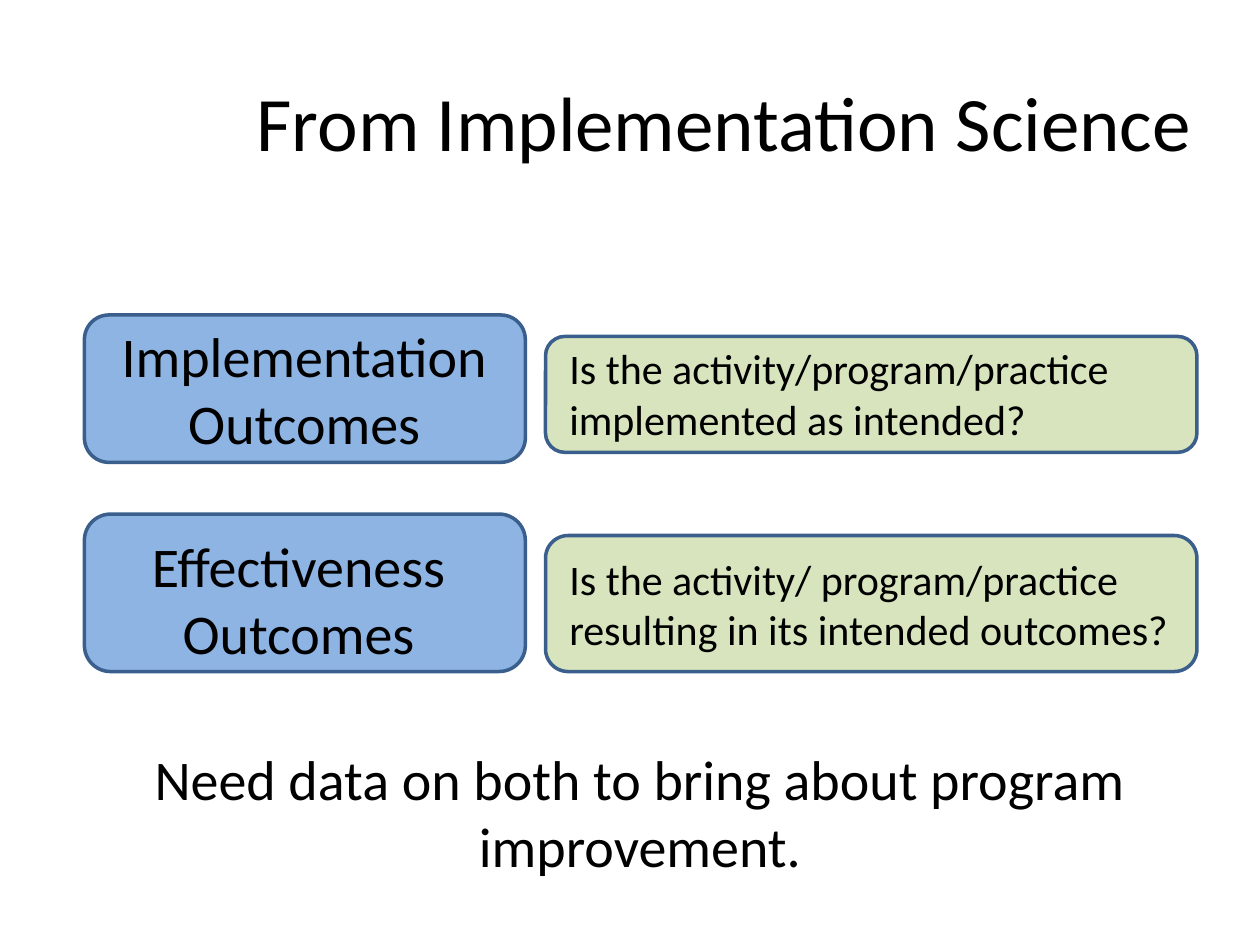
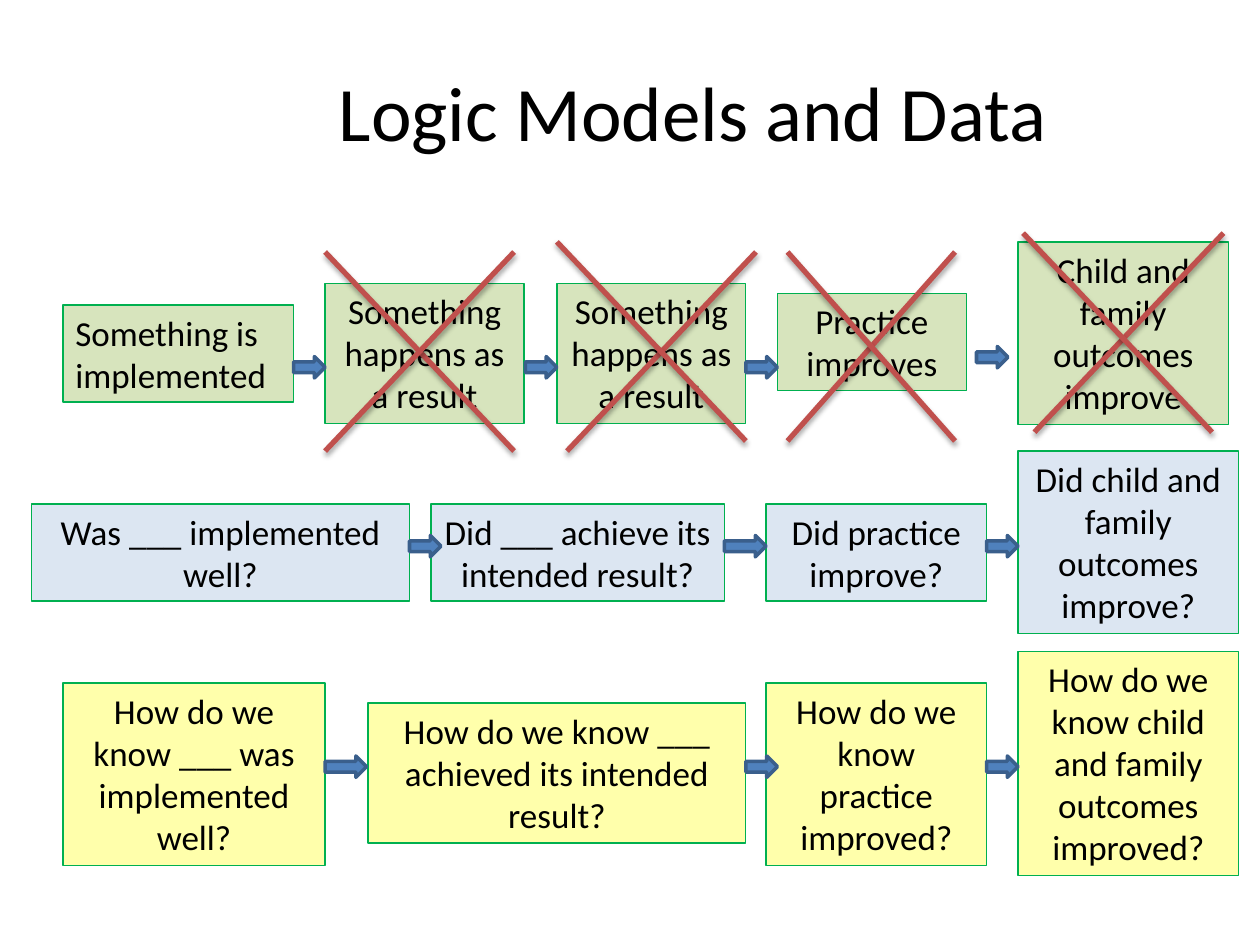
from dataclasses import dataclass
from typing import NamedTuple

from lxml import etree
from pptx import Presentation
from pptx.dml.color import RGBColor
from pptx.enum.shapes import MSO_CONNECTOR, MSO_SHAPE
from pptx.enum.text import MSO_ANCHOR, MSO_AUTO_SIZE, PP_ALIGN
from pptx.oxml.ns import qn
from pptx.util import Inches, Pt

LEFT, CENTER = PP_ALIGN.LEFT, PP_ALIGN.CENTER
TOP, MIDDLE = MSO_ANCHOR.TOP, MSO_ANCHOR.MIDDLE
GROW = MSO_AUTO_SIZE.SHAPE_TO_FIT_TEXT
RECTANGLE = MSO_SHAPE.RECTANGLE
ROUNDED = MSO_SHAPE.ROUNDED_RECTANGLE
ARROW = MSO_SHAPE.RIGHT_ARROW
STRAIGHT = MSO_CONNECTOR.STRAIGHT
TITLE_ONLY = 5


@dataclass(frozen=True)
class Theme:
    font: str = "Calibri"
    ink: str = "000000"
    blue: str = "8EB4E3"
    green: str = "D7E4BD"
    pale_blue: str = "DCE6F2"
    yellow: str = "FFFFAB"
    arrow: str = "4F81BD"
    outline: str = "3A5F8C"
    step_border: str = "00B050"
    cross: str = "C0504D"
    title_size: int = 44
    statement_size: int = 32
    question_size: int = 24
    step_size: int = 20
    border_width: float = 0.75
    outline_width: float = 2
    cross_width: float = 3


THEME = Theme()


class Frame(NamedTuple):
    left: float
    top: float
    width: float
    height: float

    def lengths(self) -> list:
        return [Inches(value) for value in self]


class Stroke(NamedTuple):
    start_x: float
    start_y: float
    end_x: float
    end_y: float


@dataclass(frozen=True)
class Card:
    panel: Frame
    caption: Frame
    text: str
    fill: str
    size: int
    align: PP_ALIGN


@dataclass(frozen=True)
class Step:
    frame: Frame
    text: str
    align: PP_ALIGN = CENTER


@dataclass(frozen=True)
class Chain:
    fill: str
    steps: list[Step]
    arrows: list[Frame]


OUTCOME_CARDS = [
    Card(Frame(0.67, 2.5, 3.5, 1.17), Frame(0.75, 2.5, 3.33, 1.18),
         "Implementation Outcomes", THEME.blue, THEME.statement_size, CENTER),
    Card(Frame(0.67, 4.08, 3.5, 1.25), Frame(0.83, 4.17, 3.08, 1.18),
         "Effectiveness Outcomes", THEME.blue, THEME.statement_size, CENTER),
    Card(Frame(4.33, 2.67, 5.17, 0.92), Frame(4.42, 2.67, 4.5, 0.91),
         "Is the activity/program/practice implemented as intended?",
         THEME.green, THEME.question_size, LEFT),
    Card(Frame(4.33, 4.25, 5.17, 1.08), Frame(4.42, 4.34, 5, 0.91),
         "Is the activity/ program/practice resulting in its intended outcomes?",
         THEME.green, THEME.question_size, LEFT),
]


def arrow_row(top: float, *spans: tuple[float, float]) -> list[Frame]:
    return [Frame(left, top, width, 0.17) for left, width in spans]


CHAINS = [
    Chain(THEME.green, [
        Step(Frame(0.5, 2.42, 1.83, 0.77), "Something is implemented", LEFT),
        Step(Frame(2.58, 2.25, 1.58, 1.11), "Something happens as a result"),
        Step(Frame(4.42, 2.25, 1.5, 1.11), "Something happens as a result"),
        Step(Frame(6.17, 2.33, 1.5, 0.77), "Practice improves"),
        Step(Frame(8.08, 1.92, 1.67, 1.45), "Child and family outcomes improve"),
    ], arrow_row(2.83, (2.33, 0.25), (4.17, 0.25), (5.92, 0.25))
        + arrow_row(2.75, (7.75, 0.25))),
    Chain(THEME.pale_blue, [
        Step(Frame(0.25, 4, 3, 0.77), "Was ___ implemented well?"),
        Step(Frame(3.42, 4, 2.33, 0.77), "Did ___ achieve its intended result?"),
        Step(Frame(6.08, 4, 1.75, 0.77), "Did practice improve?"),
        Step(Frame(8.08, 3.58, 1.75, 1.45), "Did child and family outcomes improve?"),
    ], arrow_row(4.25, (3.25, 0.25), (5.75, 0.33), (7.83, 0.25))),
    Chain(THEME.yellow, [
        Step(Frame(0.5, 5.42, 2.08, 1.45), "How do we know ___ was implemented well?"),
        Step(Frame(2.92, 5.58, 3, 1.11),
             "How do we know ___ achieved its intended result?"),
        Step(Frame(6.08, 5.42, 1.75, 1.45), "How do we know practice improved?"),
        Step(Frame(8.08, 5.17, 1.75, 1.78),
             "How do we know child and family outcomes improved?"),
    ], arrow_row(6, (2.58, 0.33), (5.92, 0.25), (7.83, 0.25))),
]

CROSSES = [
    (Stroke(2.58, 2, 4.08, 3.58), Stroke(4.08, 2, 2.58, 3.58)),
    (Stroke(9.71, 1.85, 8.21, 3.43), Stroke(8.12, 1.85, 9.62, 3.43)),
    (Stroke(7.58, 2, 6.25, 3.5), Stroke(6.25, 2, 7.58, 3.5)),
    (Stroke(6, 2, 4.5, 3.58), Stroke(4.42, 1.92, 5.92, 3.5)),
]


def color(code: str) -> RGBColor:
    return RGBColor.from_string(code)


def write(box, text: str, size: int, align: PP_ALIGN, anchor: MSO_ANCHOR = TOP) -> None:
    frame = box.text_frame
    frame.word_wrap = True
    frame.vertical_anchor = anchor
    para = frame.paragraphs[0]
    para.alignment = align
    span = para.add_run()
    span.text = text
    span.font.name = THEME.font
    span.font.size = Pt(size)
    span.font.color.rgb = color(THEME.ink)


def add_panel(page, kind: MSO_SHAPE, frame: Frame, fill: str,
              border: str = THEME.outline, width: float = THEME.outline_width):
    panel = page.shapes.add_shape(kind, *frame.lengths())
    panel.shadow.inherit = False
    panel.fill.solid()
    panel.fill.fore_color.rgb = color(fill)
    panel.line.color.rgb = color(border)
    panel.line.width = Pt(width)
    return panel


def add_text(page, frame: Frame, text: str, size: int, align: PP_ALIGN):
    box = page.shapes.add_textbox(*frame.lengths())
    write(box, text, size, align)
    return box


def add_card(page, card: Card) -> None:
    add_panel(page, ROUNDED, card.panel, card.fill)
    caption = add_text(page, card.caption, card.text, card.size, card.align)
    caption.text_frame.auto_size = GROW


def add_step(page, step: Step, fill: str) -> None:
    box = add_panel(page, RECTANGLE, step.frame, fill,
                    THEME.step_border, THEME.border_width)
    write(box, step.text, THEME.step_size, step.align)
    box.text_frame.auto_size = GROW


def add_shadow(line) -> None:
    effects = etree.SubElement(line._element.spPr, qn("a:effectLst"))
    shadow = etree.SubElement(effects, qn("a:outerShdw"), blurRad=str(Pt(3.1)),
                              dist=str(Pt(1.8)), dir="5400000", rotWithShape="0")
    tone = etree.SubElement(shadow, qn("a:srgbClr"), val=THEME.ink)
    etree.SubElement(tone, qn("a:alpha"), val="35000")


def add_cross(page, strokes: tuple[Stroke, Stroke]) -> None:
    group = page.shapes.add_group_shape()
    for stroke in strokes:
        line = group.shapes.add_connector(STRAIGHT, *(Inches(value) for value in stroke))
        line.line.color.rgb = color(THEME.cross)
        line.line.width = Pt(THEME.cross_width)
        add_shadow(line)


def add_page(deck, title: str, frame: Frame):
    page = deck.slides.add_slide(deck.slide_layouts[TITLE_ONLY])
    heading = page.shapes.title
    heading.left, heading.top, heading.width, heading.height = frame.lengths()
    write(heading, title, THEME.title_size, CENTER, MIDDLE)
    return page


def build_outcomes(deck) -> None:
    page = add_page(deck, "From Implementation Science", Frame(1.75, 0.33, 8, 1.25))
    for card in OUTCOME_CARDS:
        add_card(page, card)
    statement = add_text(page, Frame(0.58, 5.22, 9, 2.28),
                         "Need data on both to bring about program improvement.",
                         THEME.statement_size, CENTER)
    statement.text_frame.margin_top = Inches(0.69)


def build_logic_models(deck) -> None:
    page = add_page(deck, "Logic Models and Data", Frame(1, 0.25, 9, 1.25))
    for chain in CHAINS:
        for step in chain.steps:
            add_step(page, step, chain.fill)
    for chain in CHAINS:
        for frame in chain.arrows:
            add_panel(page, ARROW, frame, THEME.arrow)
    for strokes in CROSSES:
        add_cross(page, strokes)


def main() -> None:
    deck = Presentation()
    deck.slide_width, deck.slide_height = Inches(10), Inches(7.5)
    build_outcomes(deck)
    build_logic_models(deck)
    deck.save("out.pptx")


if __name__ == "__main__":
    main()
